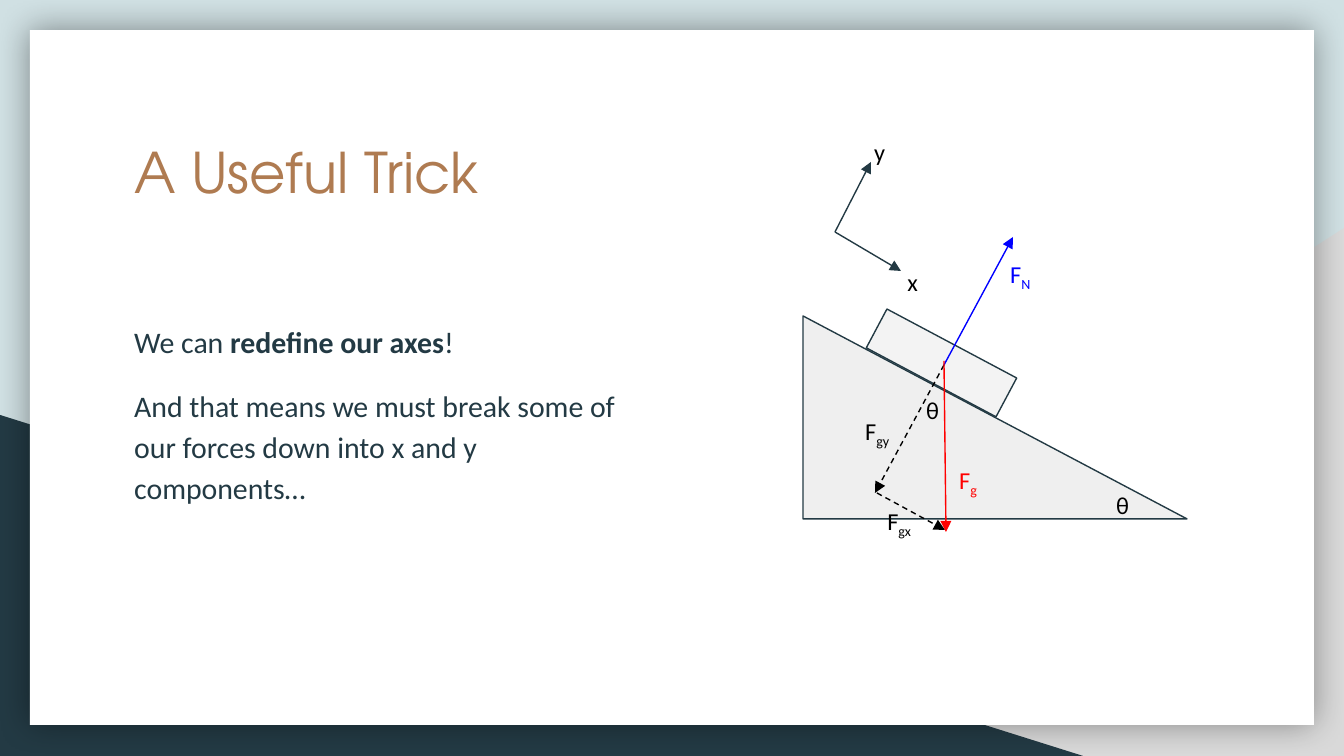
from lxml.etree import SubElement
from pptx import Presentation
from pptx.dml.color import RGBColor
from pptx.enum.dml import MSO_LINE
from pptx.enum.shapes import MSO_CONNECTOR, MSO_SHAPE
from pptx.enum.text import MSO_ANCHOR, PP_ALIGN
from pptx.oxml.ns import qn
from pptx.util import Inches, Pt

PX_PER_INCH = 134.4
MIST = RGBColor(0xD0, 0xE0, 0xE3)
SILVER = RGBColor(0xD9, 0xD9, 0xD9)
NAVY = RGBColor(0x23, 0x3A, 0x44)
WHITE = RGBColor(0xFF, 0xFF, 0xFF)
COPPER = RGBColor(0xAF, 0x7B, 0x51)
RAMP_GREY = RGBColor(0xEF, 0xEF, 0xEF)
BLOCK_GREY = RGBColor(0xF3, 0xF3, 0xF3)
BLACK = RGBColor(0, 0, 0)
BLUE = RGBColor(0, 0, 0xFF)
RED = RGBColor(0xFF, 0, 0)

TITLE = dict(name="TeX Gyre Adventor", size=Pt(30))
BODY = dict(name="Calibri", size=Pt(16))
LABEL = dict(name="Calibri", size=Pt(13))
LABEL_SIZE = (66, 52)
AXIS_LABEL_SIZE = (48, 40)


def px(*lengths):
    return [Inches(length / PX_PER_INCH) for length in lengths]


def add_solid(parent, kind, bounds, fill, line=None, rotation=0):
    shape = parent.shapes.add_shape(kind, *px(*bounds))
    shape.shadow.inherit = False
    shape.rotation = rotation
    shape.fill.solid()
    shape.fill.fore_color.rgb = fill
    if line is None:
        shape.line.fill.background()
    else:
        shape.line.color.rgb = line
        shape.line.width = Pt(0.75)
    return shape


def add_glow(shape):
    """Give the shape a soft shadow on all sides."""
    effects = shape._element.spPr.find(qn("a:effectLst"))
    shadow = SubElement(effects, qn("a:outerShdw"), blurRad=str(Pt(18)),
                        dist="0", dir="0", algn="ctr", rotWithShape="0")
    color = SubElement(shadow, qn("a:srgbClr"), val="000000")
    SubElement(color, qn("a:alpha"), val="40000")


def add_arrow(parent, start, end, color, dashed=False):
    arrow = parent.shapes.add_connector(MSO_CONNECTOR.STRAIGHT, *px(*start, *end))
    arrow.line.color.rgb = color
    arrow.line.width = Pt(0.75)
    if dashed:
        arrow.line.dash_style = MSO_LINE.DASH
    SubElement(arrow.line._get_or_add_ln(), qn("a:tailEnd"), type="triangle")
    SubElement(arrow._element.spPr, qn("a:effectLst"))


def add_text_frame(parent, bounds):
    frame = parent.shapes.add_textbox(*px(*bounds)).text_frame
    settings = dict(word_wrap=True, vertical_anchor=MSO_ANCHOR.TOP,
                    margin_left=Inches(0.1), margin_right=Inches(0.1),
                    margin_top=Inches(0.1), margin_bottom=Inches(0.1))
    for name, value in settings.items():
        setattr(frame, name, value)
    return frame


def add_span(para, text, color, style, **extra):
    span = para.add_run()
    span.text = text
    span.font.color.rgb = color
    for name, value in {**style, **extra}.items():
        setattr(span.font, name, value)
    return span


def add_label(parent, position, size, text, subscript="", color=BLACK):
    para = add_text_frame(parent, (*position, *size)).paragraphs[0]
    para.alignment = PP_ALIGN.LEFT
    add_span(para, text, color, LABEL)
    if subscript:
        span = add_span(para, subscript, color, LABEL)
        span._r.get_or_add_rPr().set("baseline", "-25000")


def add_backdrop(page):
    page.background.fill.solid()
    page.background.fill.fore_color.rgb = MIST
    corner = add_solid(page, MSO_SHAPE.RIGHT_TRIANGLE, (527, 228, 817, 528), SILVER)
    corner._element.spPr.find(qn("a:xfrm")).set("flipH", "1")
    add_solid(page, MSO_SHAPE.RIGHT_TRIANGLE, (0, 415, 1083, 341), NAVY)
    add_glow(add_solid(page, MSO_SHAPE.RECTANGLE, (30, 30, 1284, 695), WHITE))


def add_copy(page):
    title = add_text_frame(page, (121, 124, 546, 101))
    add_span(title.paragraphs[0], "A Useful Trick", COPPER, TITLE)

    body = add_text_frame(page, (121, 305, 546, 312))
    first, second = body.paragraphs[0], body.add_paragraph()
    first.line_spacing = second.line_spacing = 1.15
    second.space_before = second.space_after = Pt(12)
    add_span(first, "We can ", NAVY, BODY)
    add_span(first, "redefine our axes", NAVY, BODY, bold=True)
    add_span(first, "!", NAVY, BODY)
    add_span(second, "And that means we must break some of our forces "
                     "down into x and y components…", NAVY, BODY)


def add_incline(page):
    incline = page.shapes.add_group_shape()
    add_solid(incline, MSO_SHAPE.RIGHT_TRIANGLE, (803, 316, 384, 203), RAMP_GREY, NAVY)
    add_solid(incline, MSO_SHAPE.RECTANGLE, (868, 341, 147, 44), BLOCK_GREY, NAVY, 28)

    center = (944, 365)
    add_arrow(incline, center, (1013, 237), BLUE)
    add_arrow(incline, center, (875, 493), BLACK, dashed=True)
    add_arrow(incline, (877, 493), (945, 530), BLACK, dashed=True)
    add_arrow(incline, (944, 361), (946, 532), RED)

    for position, *label in [
        ((1103, 477), "θ"),
        ((946, 452), "F", "g", RED),
        ((997, 246), "F", "N", BLUE),
        ((852, 403), "F", "gy"),
        ((874, 493), "F", "gx"),
        ((913, 382), "θ"),
    ]:
        add_label(incline, position, LABEL_SIZE, *label)


def add_axes(page):
    axes = page.shapes.add_group_shape()
    origin = (835, 232)
    for name, tip, position in [("x", (901, 271), (894, 254)),
                                ("y", (871, 162), (861, 124))]:
        add_arrow(axes, origin, tip, NAVY)
        add_label(axes, position, AXIS_LABEL_SIZE, name)


def main():
    deck = Presentation()
    deck.slide_width, deck.slide_height = px(1344, 756)
    page = deck.slides.add_slide(deck.slide_layouts[6])
    add_backdrop(page)
    add_copy(page)
    add_incline(page)
    add_axes(page)
    deck.save("out.pptx")


if __name__ == "__main__":
    main()
